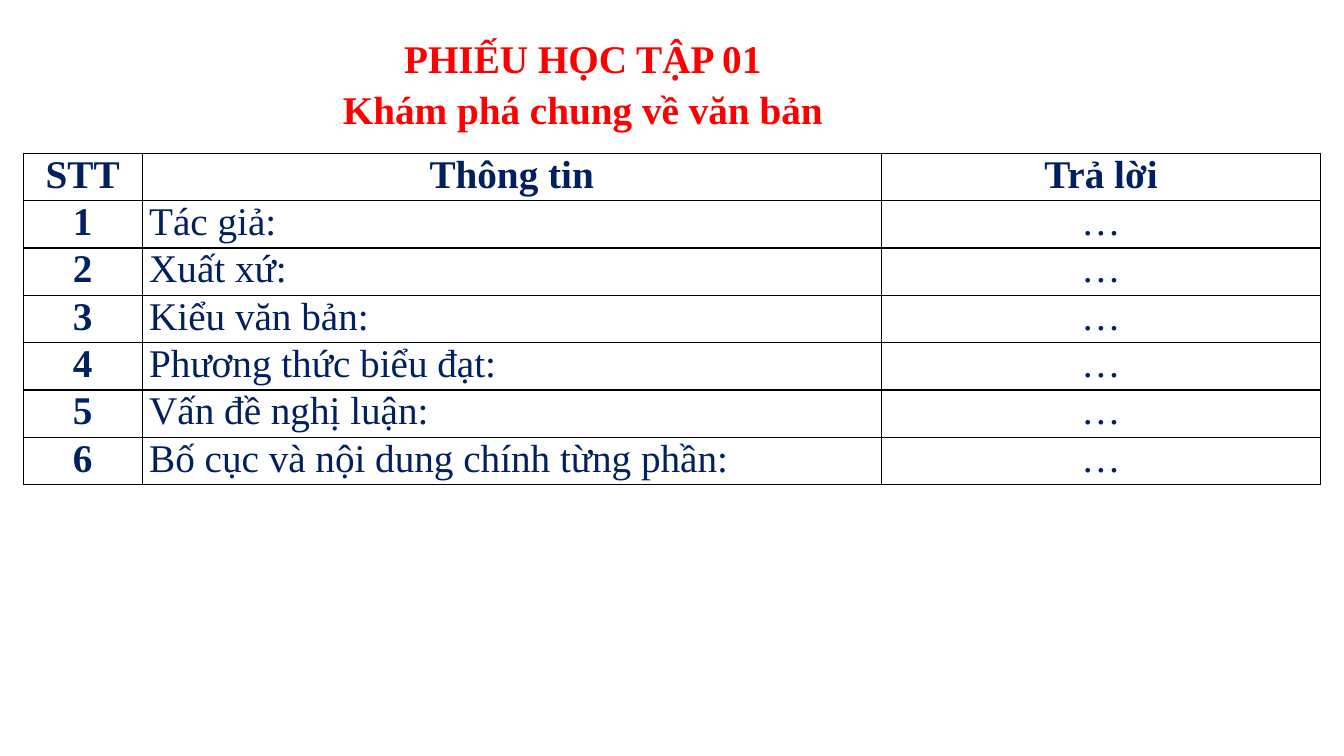
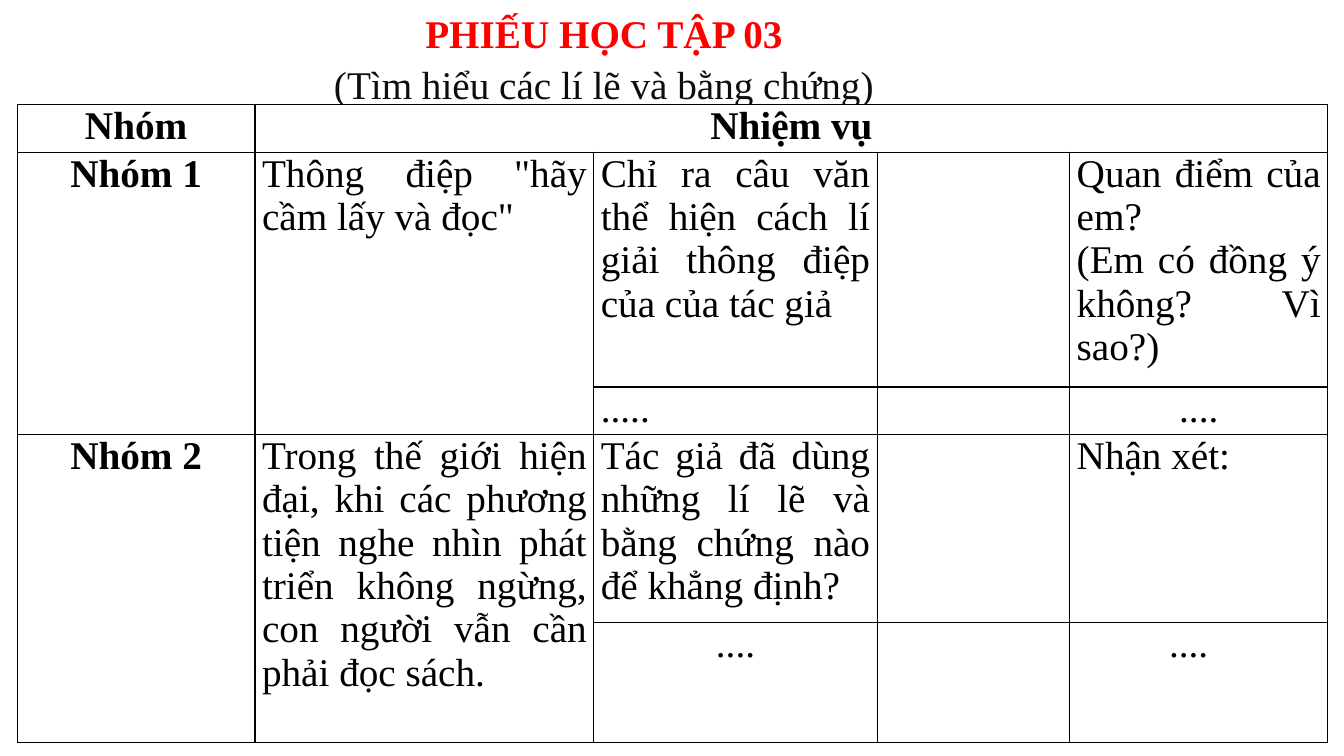
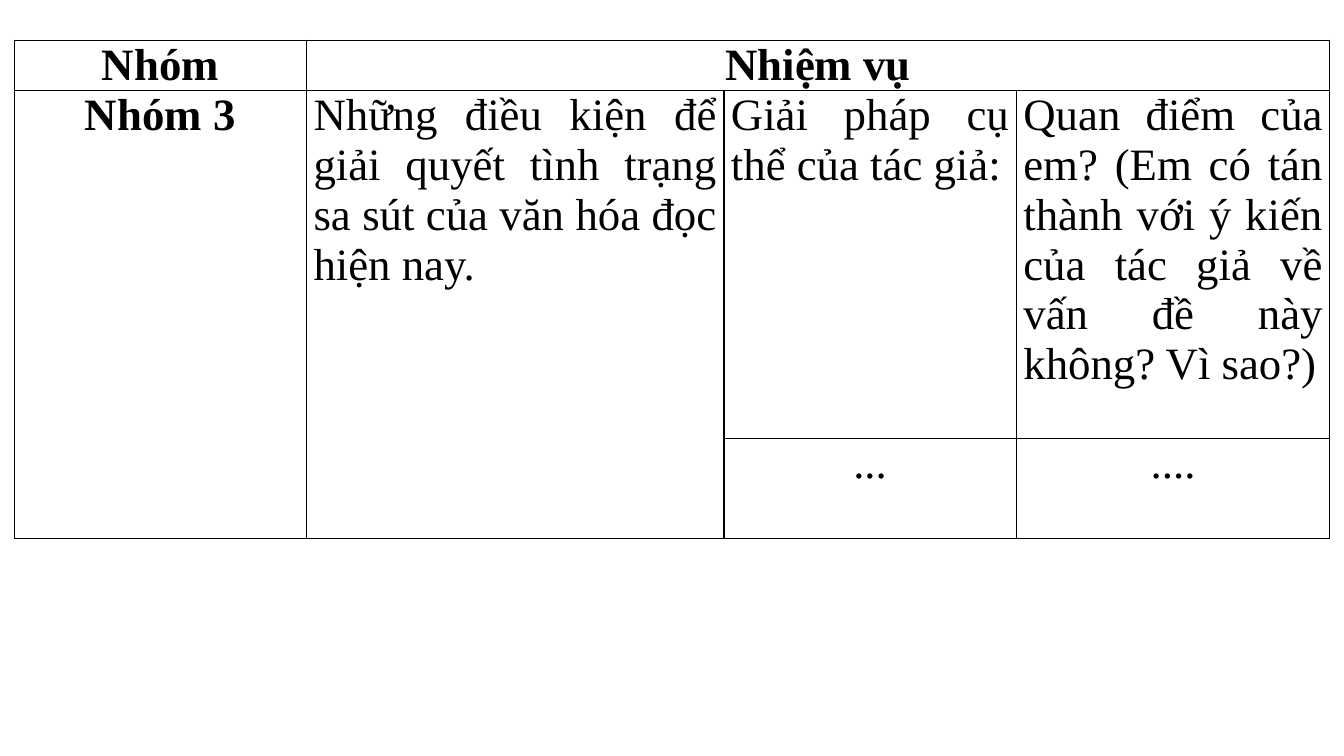
"""Build three Vietnamese reading worksheets, each a bordered table with an optional title."""
from lxml import etree
from pptx import Presentation, util as u
from pptx.dml.color import RGBColor
from pptx.enum import text
from pptx.oxml import ns

FONT = "Times New Roman"
RED = RGBColor(0xFF, 0x00, 0x00)
NAVY = RGBColor(0x00, 0x20, 0x60)
INK = RGBColor(0x0D, 0x0D, 0x0D)
BLACK = RGBColor(0x00, 0x00, 0x00)
WHITE = RGBColor(0xFF, 0xFF, 0xFF)
TITLE_ONLY, BLANK = 5, 6
CENTRED_DOTS = {"…", "...", "...."}

QUESTIONS = ["Tác giả:", "Xuất xứ:", "Kiểu văn bản:", "Phương thức biểu đạt:",
             "Vấn đề nghị luận:", "Bố cục và nội dung chính từng phần:"]

WORKSHEETS = [
    dict(
        title=[("PHIẾU HỌC TẬP 01", RED, True), ("Khám phá chung về văn bản", RED, True)],
        title_at=(1.78, 0.25, 8, 1.04),
        table_at=(0.23, 1.52), size=28, color=NAVY,
        cols=[1.18, 7.33, 4.36], rows=[0.47] * (len(QUESTIONS) + 1),
        cells=[["STT", "Thông tin", "Trả lời"]]
        + [[str(number), question, "…"] for number, question in enumerate(QUESTIONS, 1)],
    ),
    dict(
        title=[("PHIẾU HỌC TẬP 03", RED, True),
               ("(Tìm hiểu các lí lẽ và bằng chứng)", INK, False)],
        title_at=(1.96, 0, 8.06, 1.04),
        table_at=(0.17, 1.04), size=28, color=BLACK,
        cols=[2.36, 3.36, 2.81, 1.91, 2.36, 0.2], rows=[0.47, 2.33, 0.47, 1.87, 1.19],
        cells=[
            ["Nhóm", "Nhiệm vụ", "", "", "", ""],
            ["Nhóm 1", 'Thông điệp "hãy cầm lấy và đọc"',
             "Chỉ ra câu văn thể hiện cách lí giải thông điệp của của tác giả", "",
             "Quan điểm của em?\n(Em có đồng ý không? Vì sao?)", ""],
            ["", "", ".....", "", "....", ""],
            ["Nhóm 2", "Trong thế giới hiện đại, khi các phương tiện nghe nhìn phát triển "
             "không ngừng, con người vẫn cần phải đọc sách.",
             "Tác giả đã dùng những lí lẽ và bằng chứng nào để khẳng định?", "",
             "Nhận xét:", ""],
            ["", "", "....", "", "....", ""],
        ],
        merges=[(0, 1, 0, 5), (1, 0, 2, 0), (1, 1, 2, 1), (1, 4, 1, 5), (2, 4, 2, 5),
                (3, 0, 4, 0), (3, 1, 4, 1), (3, 4, 3, 5)],
        open_edges={(4, 4): "R", (4, 5): "L"},
    ),
    dict(
        table_at=(0.14, 0.4), size=32, color=BLACK,
        cols=[2.9, 4.14, 2.9, 3.11], rows=[0.5, 3.45, 0.99],
        cells=[
            ["Nhóm", "Nhiệm vụ", "", ""],
            ["Nhóm 3", "Những điều kiện để giải quyết tình trạng sa sút của văn hóa đọc hiện nay.",
             "Giải pháp cụ thể của tác giả:",
             "Quan điểm của em? (Em có tán thành với ý kiến của tác giả về vấn đề này "
             "không? Vì sao?)"],
            ["", "", "...", "...."],
        ],
        merges=[(0, 1, 0, 3), (1, 0, 2, 0), (1, 1, 2, 1)],
    ),
]


def format_paragraph(paragraph, align, size, color, bold):
    paragraph.alignment = align
    for font in [paragraph.font] + [run.font for run in paragraph.runs]:
        font.name, font.size, font.bold = FONT, u.Pt(size), bold
        font.color.rgb = color


def add_title(slide, lines, box):
    title = slide.shapes.title
    title.left, title.top, title.width, title.height = map(u.Inches, box)
    frame = title.text_frame
    frame.vertical_anchor = text.MSO_ANCHOR.TOP
    frame.auto_size = text.MSO_AUTO_SIZE.NONE
    frame.text = "\n".join(words for words, _, _ in lines)
    for paragraph, (_, color, bold) in zip(frame.paragraphs, lines):
        format_paragraph(paragraph, text.PP_ALIGN.CENTER, 28, color, bold)
        paragraph.line_spacing = 1.09


def draw_borders(cell, open_edge):
    properties = cell._tc.get_or_add_tcPr()
    for place, edge in enumerate("LRTB"):
        line = etree.Element(ns.qn(f"a:ln{edge}"), w=str(u.Pt(1)))
        if edge == open_edge:
            etree.SubElement(line, ns.qn("a:noFill"))
        else:
            fill = etree.SubElement(line, ns.qn("a:solidFill"))
            etree.SubElement(fill, ns.qn("a:srgbClr"), val=str(BLACK))
        properties.insert(place, line)


def add_grid(slide, sheet):
    cols, rows = sheet["cols"], sheet["rows"]
    box = map(u.Inches, (*sheet["table_at"], sum(cols), sum(rows)))
    grid = slide.shapes.add_table(len(rows), len(cols), *box).table
    grid.first_row = grid.horz_banding = False
    for column, width in zip(grid.columns, cols):
        column.width = u.Inches(width)
    for row, height in zip(grid.rows, rows):
        row.height = u.Inches(height)
    for r, texts in enumerate(sheet["cells"]):
        for c, words in enumerate(texts):
            cell = grid.cell(r, c)
            cell.margin_left = cell.margin_right = u.Inches(0.07)
            cell.margin_top = cell.margin_bottom = 0
            cell.fill.solid()
            cell.fill.fore_color.rgb = WHITE
            draw_borders(cell, sheet.get("open_edges", {}).get((r, c)))
            heading = r == 0 or c == 0
            centred = heading or words in CENTRED_DOTS
            align = text.PP_ALIGN.CENTER if centred else text.PP_ALIGN.JUSTIFY
            cell.text_frame.text = words
            for paragraph in cell.text_frame.paragraphs:
                format_paragraph(paragraph, align, sheet["size"], sheet["color"], heading)
    for top, left, bottom, right in sheet.get("merges", []):
        grid.cell(top, left).merge(grid.cell(bottom, right))


def main():
    deck = Presentation()
    deck.slide_width, deck.slide_height = u.Inches(13.33), u.Inches(7.5)
    for sheet in WORKSHEETS:
        layout = TITLE_ONLY if "title" in sheet else BLANK
        slide = deck.slides.add_slide(deck.slide_layouts[layout])
        if "title" in sheet:
            add_title(slide, sheet["title"], sheet["title_at"])
        add_grid(slide, sheet)
    deck.save("out.pptx")


if __name__ == "__main__":
    main()
